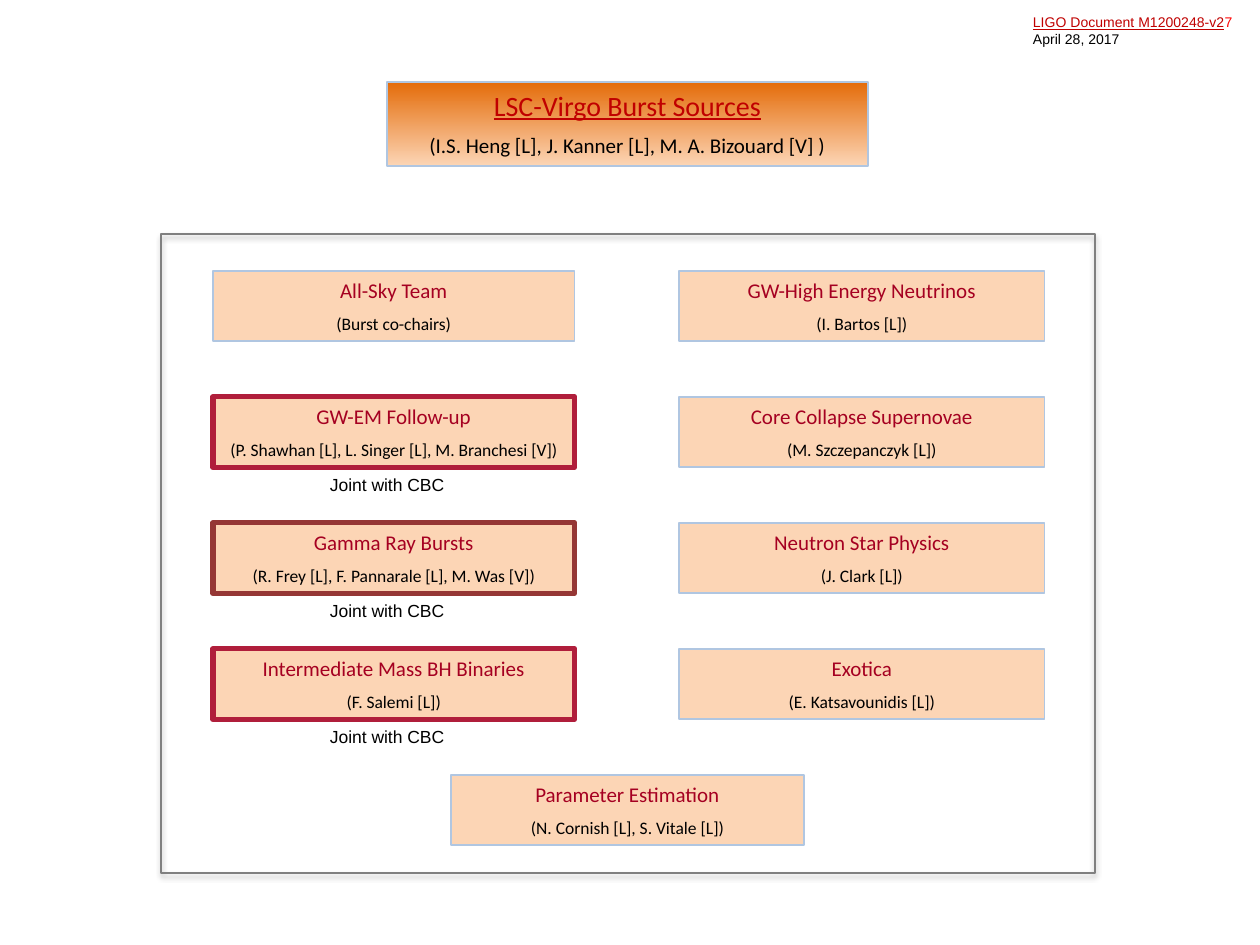
from lxml import etree
from pptx import Presentation
from pptx.dml.color import RGBColor
from pptx.enum.shapes import MSO_SHAPE
from pptx.enum.text import MSO_ANCHOR, MSO_AUTO_SIZE, PP_ALIGN
from pptx.oxml import parse_xml
from pptx.util import Inches, Pt

RECTANGLE = MSO_SHAPE.RECTANGLE
TOP = MSO_ANCHOR.TOP
FIT_SHAPE = MSO_AUTO_SIZE.SHAPE_TO_FIT_TEXT
CENTER = PP_ALIGN.CENTER

PEACH, ORANGE = "FCD5B5", "E46C0A"
PALE_BLUE, CRIMSON, BROWN = "B0C6E1", "B01E3B", "953735"
RED, DARK_RED, BLACK = "C00000", "A50021", "000000"

FRAME_SHADOW = """
<a:effectLst xmlns:a="http://schemas.openxmlformats.org/drawingml/2006/main">
  <a:outerShdw blurRad="39370" dist="22860" dir="5400000" rotWithShape="0">
    <a:srgbClr val="000000"><a:alpha val="35000"/></a:srgbClr>
  </a:outerShdw>
</a:effectLst>"""


def color(value):
    return RGBColor.from_string(value)


def add_box(left, top, width, height, lines, line_color=PALE_BLUE, line_width=1):
    """Add a peach box; each line of text is (text, size, color)."""
    box = slide.shapes.add_shape(
        RECTANGLE, Inches(left), Inches(top), Inches(width), Inches(height))
    box.shadow.inherit = False
    box.fill.solid()
    box.fill.fore_color.rgb = color(PEACH)
    box.line.color.rgb = color(line_color)
    box.line.width = Pt(line_width)
    frame = box.text_frame
    frame.word_wrap = True
    frame.auto_size = FIT_SHAPE
    frame.vertical_anchor = TOP
    for index, (text, size, text_color) in enumerate(lines):
        paragraph = frame.add_paragraph() if index else frame.paragraphs[0]
        paragraph.text = text
        paragraph.alignment = CENTER
        paragraph.space_before = Pt(6 if index else 0)
        paragraph.font.name = "Calibri"
        paragraph.font.size = Pt(size)
        paragraph.font.color.rgb = color(text_color)
    return box


presentation = Presentation()
presentation.slide_width = Inches(10)
presentation.slide_height = Inches(7.5)
slide = presentation.slides.add_slide(presentation.slide_layouts[6])

# Document number and date
header = slide.shapes.add_textbox(
    Inches(8.1), Inches(0.06), Inches(1.84), Inches(0.37)).text_frame
header.word_wrap = True
header.auto_size = FIT_SHAPE
number, date = header.paragraphs[0], header.add_paragraph()
for text, text_color, underline in (
        ("LIGO Document M1200248-v2", RED, True), ("7", "FF0000", False)):
    run = number.add_run()
    run.text = text
    run.font.color.rgb = color(text_color)
    run.font.underline = underline
date.text = "April 28, 2017"
date.font.color.rgb = color(BLACK)
for paragraph in header.paragraphs:
    paragraph.font.name = "Arial"
    paragraph.font.size = Pt(8)
    for run in paragraph.runs:
        run.font.name = "Arial"
        run.font.size = Pt(8)

# Title
title = add_box(3.07, 0.65, 3.82, 0.67, [
    ("LSC-Virgo Burst Sources", 16, RED),
    ("(I.S. Heng [L], J. Kanner [L], M. A. Bizouard [V] )", 12, BLACK)])
title.text_frame.paragraphs[0].font.underline = True
title.fill.gradient()
title.fill.gradient_angle = 270
for stop, position, stop_color in zip(
        title.fill.gradient_stops, (0, 1), (ORANGE, PEACH)):
    stop.position = position
    stop.color.rgb = color(stop_color)

# Frame around the teams
frame = slide.shapes.add_shape(
    RECTANGLE, Inches(1.28), Inches(1.86), Inches(7.41), Inches(5.07))
frame.fill.background()
frame.line.color.rgb = color("808080")
frame.line.width = Pt(1)
frame._element.spPr.append(parse_xml(FRAME_SHADOW))

# Teams: two columns of four, one inch apart; a border color marks a joint team
columns = [
    (1.69, 2.87, [
        ("All-Sky Team", "(Burst co-chairs)", None),
        ("GW-EM Follow-up", "(P. Shawhan [L], L. Singer [L], M. Branchesi [V])", CRIMSON),
        ("Gamma Ray Bursts", "(R. Frey [L], F. Pannarale [L], M. Was [V])", BROWN),
        ("Intermediate Mass BH Binaries", "(F. Salemi [L])", CRIMSON)]),
    (5.39, 2.9, [
        ("GW-High Energy Neutrinos", "(I. Bartos [L])", None),
        ("Core Collapse Supernovae", "(M. Szczepanczyk [L])", None),
        ("Neutron Star Physics", "(J. Clark [L])", None),
        ("Exotica", "(E. Katsavounidis [L])", None)]),
    (3.58, 2.8, [
        ("Parameter Estimation", "(N. Cornish [L], S. Vitale [L])", None)]),
]
first_rows = (2.15, 2.15, 6.15)
for (left, width, teams), first_row in zip(columns, first_rows):
    for row, (team, chairs, joint_color) in enumerate(teams):
        top = first_row + row
        add_box(left, top, width, 0.56,
                [(team, 12, DARK_RED), (chairs, 10, BLACK)],
                joint_color or PALE_BLUE, 3 if joint_color else 1)
        if joint_color:
            label = slide.shapes.add_textbox(
                Inches(2.52), Inches(top + 0.56), Inches(1.16), Inches(0.27)).text_frame
            label.word_wrap = False
            label.auto_size = FIT_SHAPE
            paragraph = label.paragraphs[0]
            paragraph.text = "Joint with CBC"
            paragraph.font.name = "Arial"
            paragraph.font.size = Pt(10)
            paragraph.font.color.rgb = color(BLACK)

presentation.save("out.pptx")
